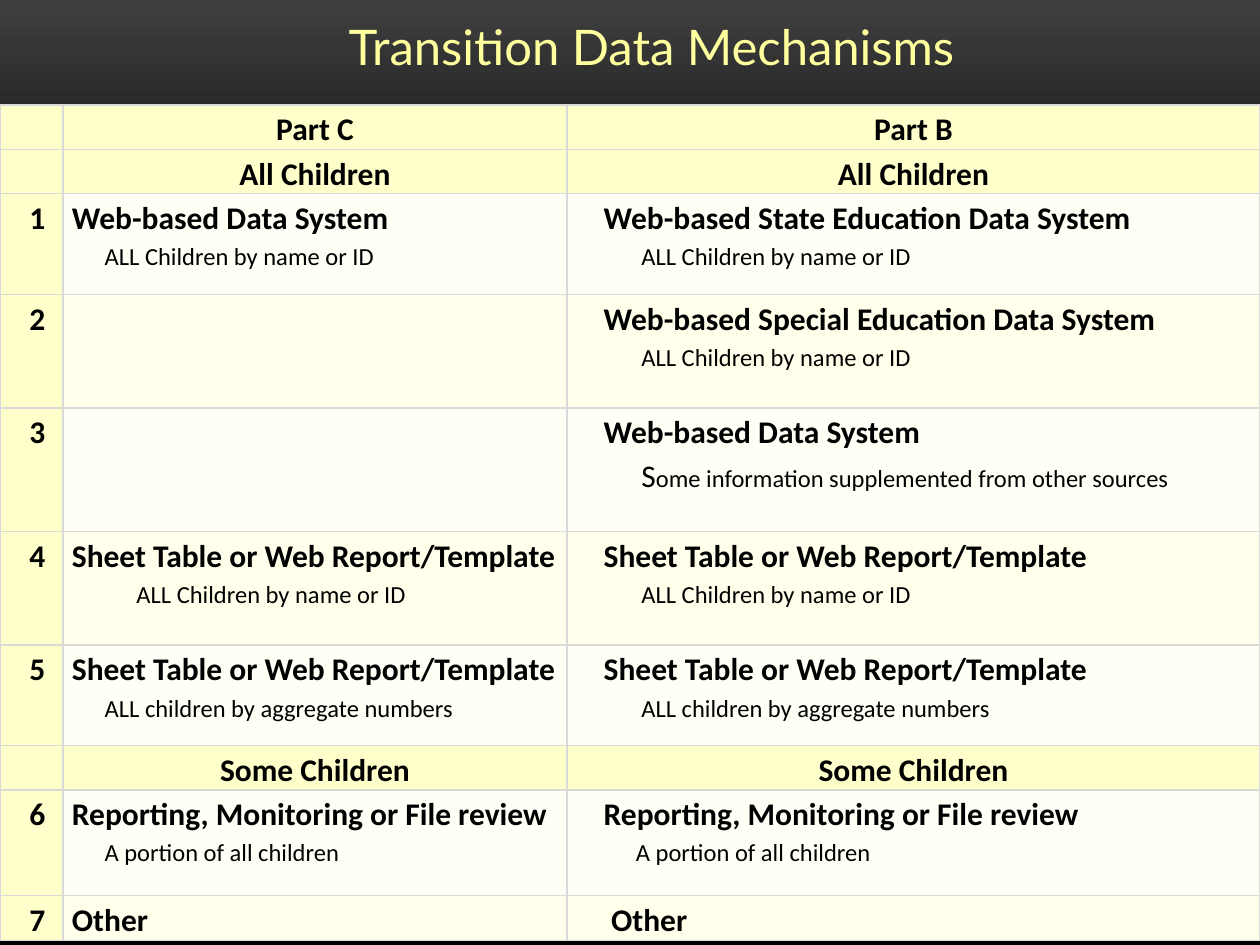
from lxml import etree
from pptx import Presentation
from pptx import util as u
from pptx.dml.color import RGBColor
from pptx.enum import text
from pptx.oxml import ns

BLACK = RGBColor(0x00, 0x00, 0x00)
CHARCOAL = RGBColor(0x3F, 0x3F, 0x3F)
TITLE_YELLOW = RGBColor(0xFF, 0xFF, 0x9E)
HEADER_YELLOW = RGBColor(0xFF, 0xFF, 0xCC)
ROW_TINTS = (RGBColor(0xFF, 0xFF, 0xF6), RGBColor(0xFF, 0xFF, 0xEC))
BORDER_GREY = RGBColor(0xD9, 0xD9, 0xD9)

COLUMN_WIDTHS = (1.27, 10.16, 13.97)
ROW_HEIGHTS = (0.81, 0.81, 2.03, 2.29, 2.49, 2.29, 2.03, 0.86, 2.13, 0.91)
NUMBER_INDENT = 0.41
HEADING_INDENTS = (0, 0.56)
DETAIL_INDENTS = (0.66, 1.32)

BY_NAME = "ALL Children by name or ID"
REPORT = "Sheet Table or Web Report/Template"
AGGREGATE = "ALL children by aggregate numbers"
REVIEW = "Reporting, Monitoring or File review"
PORTION = "A portion of all children"

# A plain string is a band across both parts. Otherwise each row holds the
# Part C and Part B entries: heading, detail and optional own indents.
ROWS = (
    ("Part C", "Part B"),
    "All Children",
    (dict(heading="Web-based Data System", detail=BY_NAME),
     dict(heading="Web-based State Education Data System", detail=BY_NAME)),
    (None, dict(heading="Web-based Special Education Data System", detail=BY_NAME)),
    (None, dict(heading="Web-based Data System", initial="S",
                detail="ome information supplemented from other sources")),
    (dict(heading=REPORT, detail=BY_NAME, detail_indent=1.3),
     dict(heading=REPORT, detail=BY_NAME)),
    (dict(heading=REPORT, detail=AGGREGATE), dict(heading=REPORT, detail=AGGREGATE)),
    "Some Children",
    (dict(heading=REVIEW, detail=PORTION),
     dict(heading=REVIEW, detail=PORTION, detail_indent=1.21)),
    (dict(heading="Other"), dict(heading="Other", heading_indent=0.71)),
)


def write(para, words, size=18, font="Calibri", color=BLACK, bold=False,
          align=None, indent=0, spacing=None):
    """Add a span to the paragraph and set the paragraph's layout."""
    if indent:
        para._p.get_or_add_pPr().set("marL", str(u.Cm(indent)))
    if align is not None:
        para.alignment = align
    if spacing:
        para.line_spacing = spacing
    span = para.add_run()
    span.text = words
    span.font.size = u.Pt(size)
    span.font.name = font
    span.font.bold = bold
    span.font.color.rgb = color


def paint_background(page):
    fill = page.background.fill
    fill.gradient()
    fill.gradient_angle = 270
    for stop, (position, color) in zip(fill.gradient_stops, ((0, CHARCOAL), (0.31, BLACK))):
        stop.position = position
        stop.color.rgb = color


def add_title(page, left, top, width, height):
    box = page.shapes.add_textbox(u.Cm(left), u.Cm(top), u.Cm(width), u.Cm(height))
    box.text_frame.word_wrap = True
    write(box.text_frame.paragraphs[0], "Transition Data Mechanisms",
          size=28, font="Lato", color=TITLE_YELLOW)


def style_cell(cell, color):
    cell.margin_left = cell.margin_right = u.Cm(0.18)
    cell.margin_top = cell.margin_bottom = 0
    properties = cell._tc.get_or_add_tcPr()
    for side in ("lnL", "lnR", "lnT", "lnB"):
        line = etree.SubElement(properties, ns.qn(f"a:{side}"), w=str(u.Pt(1)))
        solid = etree.SubElement(line, ns.qn("a:solidFill"))
        etree.SubElement(solid, ns.qn("a:srgbClr"), val=str(BORDER_GREY))
    cell.fill.solid()
    cell.fill.fore_color.rgb = color


def write_entry(cell, heading, detail=None, initial=None, heading_indent=0, detail_indent=0):
    frame = cell.text_frame
    write(frame.paragraphs[0], heading, bold=True, indent=heading_indent, spacing=1.15)
    if detail:
        para = frame.add_paragraph()
        if initial:
            write(para, initial)
        write(para, detail, size=14, indent=detail_indent, spacing=1.15)


def add_mechanism_table(page, left, top):
    table = page.shapes.add_table(
        len(ROW_HEIGHTS), len(COLUMN_WIDTHS), u.Cm(left), u.Cm(top),
        u.Cm(sum(COLUMN_WIDTHS)), u.Cm(sum(ROW_HEIGHTS))).table
    table.first_row = table.horz_banding = False
    for column, width in zip(table.columns, COLUMN_WIDTHS):
        column.width = u.Cm(width)

    number = 0
    for index, (height, content) in enumerate(zip(ROW_HEIGHTS, ROWS)):
        table.rows[index].height = u.Cm(height)
        number_cell, *part_cells = table.rows[index].cells
        style_cell(number_cell, HEADER_YELLOW)
        parts = (content, content) if isinstance(content, str) else content
        is_band = isinstance(parts[1], str)
        if not is_band:
            number += 1
            write(number_cell.text_frame.paragraphs[0], str(number), bold=True,
                  indent=NUMBER_INDENT, spacing=1.15)
        for cell, part, heading_indent, detail_indent in zip(
                part_cells, parts, HEADING_INDENTS, DETAIL_INDENTS):
            style_cell(cell, HEADER_YELLOW if is_band else ROW_TINTS[index % 2])
            if is_band:
                write(cell.text_frame.paragraphs[0], part, bold=True,
                      align=text.PP_ALIGN.CENTER, spacing=1.15)
            elif part:
                indents = dict(heading_indent=heading_indent, detail_indent=detail_indent)
                write_entry(cell, **{**indents, **part})


def main():
    deck = Presentation()
    deck.slide_width, deck.slide_height = u.Cm(25.4), u.Cm(19.05)
    page = deck.slides.add_slide(deck.slide_layouts[6])
    paint_background(page)
    add_mechanism_table(page, 0, 2.12)
    add_title(page, 6.78, 0.2, 12.9, 1.45)
    deck.save("out.pptx")


if __name__ == "__main__":
    main()
